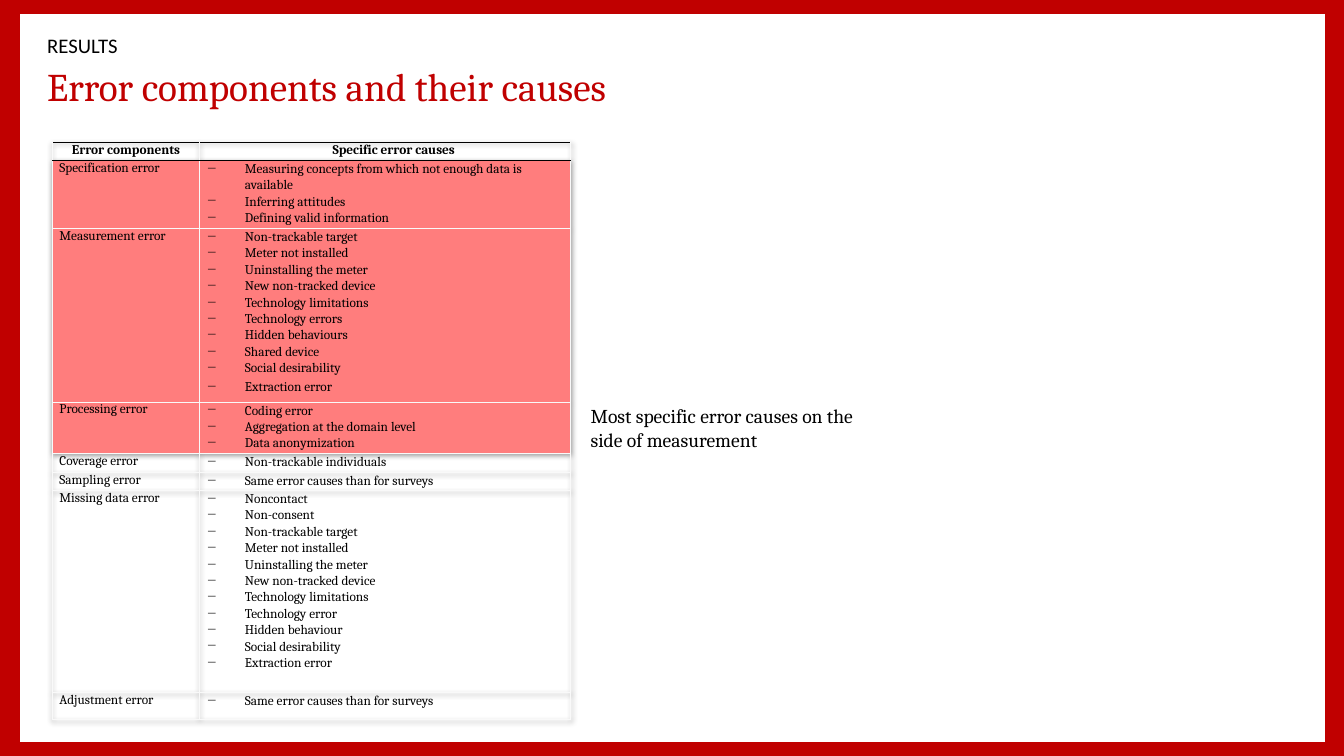
from lxml import etree
from pptx import Presentation
from pptx.dml.color import RGBColor
from pptx.enum import shapes, text
from pptx.oxml import parse_xml
from pptx.oxml.ns import nsdecls, qn
from pptx.util import Inches, Pt

COLORS = {"red": "C00000", "white": "FFFFFF", "black": "000000",
          "highlight": "FF7D7D", "grid": "F9F9F9"}
HEADERS = ["Error components", "Specific error causes"]
# component, row height, highlighted, causes
COMPONENTS = [
    ("Specification error", 0.66, True, [
        "Measuring concepts from which not enough data is available",
        "Inferring attitudes", "Defining valid information"]),
    ("Measurement error", 1.69, True, [
        "Non-trackable target", "Meter not installed", "Uninstalling the meter",
        "New non-tracked device", "Technology limitations", "Technology errors",
        "Hidden behaviours", "Shared device", "Social desirability",
        "Extraction error"]),
    ("Processing error", 0.5, True, [
        "Coding error", "Aggregation at the domain level", "Data anonymization"]),
    ("Coverage error", 0.19, False, ["Non-trackable individuals"]),
    ("Sampling error", 0.18, False, ["Same error causes than for surveys"]),
    ("Missing data error", 2, False, [
        "Noncontact", "Non-consent", "Non-trackable target", "Meter not installed",
        "Uninstalling the meter", "New non-tracked device",
        "Technology limitations", "Technology error", "Hidden behaviour",
        "Social desirability", "Extraction error"]),
    ("Adjustment error", 0.27, False, ["Same error causes than for surveys"]),
]


def write(paragraph, words, size, font="Cambria", color="black", bold=False):
    paragraph.text = words
    paragraph.font.name = font
    paragraph.font.size = Pt(size)
    paragraph.font.bold = bold
    paragraph.font.color.rgb = RGBColor.from_string(COLORS[color])


def add_border(cell, side, color, width):
    """Draw one side (L, R, T or B) of a cell; call in that order, before the fill."""
    cell._tc.get_or_add_tcPr().append(parse_xml(
        f'<a:ln{side} {nsdecls("a")} w="{Pt(width)}"><a:solidFill>'
        f'<a:srgbClr val="{COLORS[color]}"/></a:solidFill></a:ln{side}>'))


presentation = Presentation()
presentation.slide_width = Inches(13.33)
presentation.slide_height = Inches(7.5)
slide = presentation.slides.add_slide(presentation.slide_layouts[6])

# Red frame around a white page
for color, box in [("red", (0, 0, 13.33, 7.5)), ("white", (0.2, 0.14, 12.94, 7.22))]:
    shape = slide.shapes.add_shape(shapes.MSO_SHAPE.RECTANGLE, *map(Inches, box))
    shape.shadow.inherit = False
    shape.fill.solid()
    shape.fill.fore_color.rgb = RGBColor.from_string(COLORS[color])
    shape.line.fill.background()

# Title, section label and remark
middle, top = text.MSO_ANCHOR.MIDDLE, text.MSO_ANCHOR.TOP
for words, box, size, font, color, spacing, anchor in [
    ("Error components and their causes", (0.37, 0.65, 11.67, 0.47),
     28, "Cambria", "red", 0.9, middle),
    ("RESULTS", (0.37, 0.32, 11.28, 0.31), 14.8, "Calibri", "black", 0.8, middle),
    ("Most specific error causes on the side of measurement",
     (5.76, 3.96, 2.86, 0.63), 14, "Cambria", "black", 1.0, top),
]:
    frame = slide.shapes.add_textbox(*map(Inches, box)).text_frame
    frame.word_wrap = True
    frame.vertical_anchor = anchor
    frame.paragraphs[0].line_spacing = spacing
    write(frame.paragraphs[0], words, size, font, color)

# Table of error components
heights = [0.18] + [component[1] for component in COMPONENTS]
table = slide.shapes.add_table(
    len(heights), 2, Inches(0.52), Inches(1.41), Inches(5.14), Inches(sum(heights))).table
table.first_row = table.horz_banding = False
properties = table._tbl.tblPr
properties.find(qn("a:tableStyleId")).text = "{2D5ABB26-0587-4C30-8999-92F81FD0307C}"
properties.insert(0, parse_xml(
    f'<a:effectLst {nsdecls("a")}><a:outerShdw blurRad="{Pt(4)}" dist="{Pt(1.5)}" '
    f'dir="5400000" algn="t" rotWithShape="0"><a:srgbClr val="{COLORS["black"]}">'
    '<a:alpha val="40000"/></a:srgbClr></a:outerShdw></a:effectLst>'))
for column, width in zip(table.columns, [1.46, 3.68]):
    column.width = Inches(width)
for row, height in zip(table.rows, heights):
    row.height = Inches(height)

for index, row in enumerate(table.rows):
    for cell in row.cells:
        cell.margin_left = cell.margin_right = Inches(0.07)
        cell.margin_top = cell.margin_bottom = 0
        add_border(cell, "L", "grid", 0.75)
        add_border(cell, "R", "grid", 0.75)
        for side, is_rule in [("T", index <= 1), ("B", index == 0)]:
            add_border(cell, side, *(("black", 1) if is_rule else ("grid", 0.75)))
        if index and COMPONENTS[index - 1][2]:
            cell.fill.solid()
            cell.fill.fore_color.rgb = RGBColor.from_string(COLORS["highlight"])
        else:
            cell.fill.background()

for cell, header in zip(table.rows[0].cells, HEADERS):
    paragraph = cell.text_frame.paragraphs[0]
    paragraph.alignment = text.PP_ALIGN.CENTER
    write(paragraph, header, 9.5, bold=True)
table.cell(0, 1).margin_left = Inches(0.24)

for index, (component, _, _, causes) in enumerate(COMPONENTS, start=1):
    write(table.cell(index, 0).text_frame.paragraphs[0], component, 9.5)
    frame = table.cell(index, 1).text_frame
    for number, cause in enumerate(causes):
        paragraph = frame.add_paragraph() if number else frame.paragraphs[0]
        paragraph.line_spacing = 1.07
        if component == "Measurement error" and number == len(causes) - 1:
            paragraph.space_before = Pt(2)
        bullet = paragraph._p.get_or_add_pPr()
        bullet.set("marL", str(Inches(0.38)))
        bullet.set("indent", str(-Inches(0.38)))
        etree.SubElement(bullet, qn("a:buChar")).set("char", "−")
        write(paragraph, cause, 9.5)

presentation.save("out.pptx")
